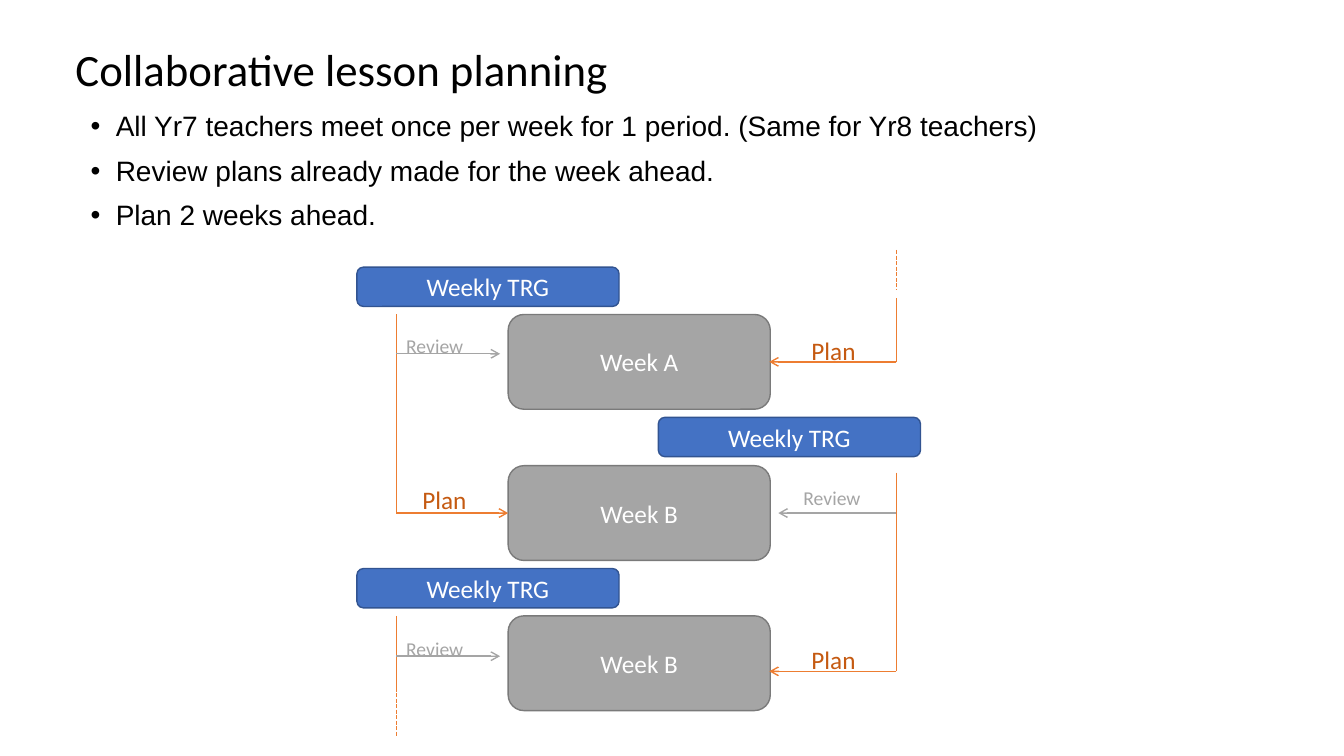
from lxml.etree import SubElement
from pptx import Presentation
from pptx.dml.color import RGBColor
from pptx.enum.dml import MSO_LINE
from pptx.enum.shapes import MSO_CONNECTOR, MSO_SHAPE
from pptx.enum.text import MSO_ANCHOR, PP_ALIGN
from pptx.oxml.ns import qn
from pptx.util import Emu, Pt

PX = 9144
BLUE, BLUE_EDGE = "4472C4", "325491"
GRAY, GRAY_EDGE = "A5A5A5", "7A7A7A"
ORANGE, RUST = "ED7D31", "C55A11"
LEFT_LINE, RIGHT_LINE = 393, 889


def color(value):
    return RGBColor.from_string(value)


def write(shape, lines, size, font_name, font_color):
    frame = shape.text_frame
    frame.text = "\n".join(lines)
    for paragraph in frame.paragraphs:
        for run in paragraph.runs:
            run.font.size = Pt(size)
            run.font.name = font_name
            run.font.color.rgb = color(font_color)
    return frame


presentation = Presentation()
presentation.slide_width = Emu(1333 * PX)
presentation.slide_height = Emu(750 * PX)
slide = presentation.slides.add_slide(presentation.slide_layouts[6])
shapes = slide.shapes

title = shapes.add_textbox(65 * PX, 35 * PX, 788 * PX, 73 * PX)
frame = write(title, ["Collaborative lesson planning"], 32, "Calibri", "000000")
frame.word_wrap = True
frame.vertical_anchor = MSO_ANCHOR.MIDDLE
frame.paragraphs[0].line_spacing = 0.9

body = shapes.add_textbox(80 * PX, 107 * PX, 1207 * PX, 506 * PX)
points = [
    "All Yr7 teachers meet once per week for 1 period. (Same for Yr8 teachers)",
    "Review plans already made for the week ahead.",
    "Plan 2 weeks ahead.",
]
frame = write(body, points, 20, "Arial", "000000")
frame.word_wrap = True
for index, paragraph in enumerate(frame.paragraphs):
    paragraph.line_spacing = 0.9
    paragraph.space_before = Pt(10 if index else 0)
    properties = paragraph._p.get_or_add_pPr()
    properties.set("marL", str(25 * PX))
    properties.set("indent", str(-25 * PX))
    SubElement(properties, qn("a:buFont")).set("typeface", "Arial")
    SubElement(properties, qn("a:buChar")).set("char", "•")

boxes = [
    ("Week A", 504, 312, 94, GRAY, GRAY_EDGE),
    ("Weekly TRG", 653, 414, 39, BLUE, BLUE_EDGE),
    ("Weekly TRG", 354, 265, 39, BLUE, BLUE_EDGE),
    ("Week B", 504, 462, 94, GRAY, GRAY_EDGE),
    ("Weekly TRG", 354, 564, 39, BLUE, BLUE_EDGE),
    ("Week B", 504, 611, 94, GRAY, GRAY_EDGE),
]
for text, left, top, height, fill, edge in boxes:
    box = shapes.add_shape(
        MSO_SHAPE.ROUNDED_RECTANGLE, left * PX, top * PX, 260 * PX, height * PX
    )
    box.shadow.inherit = False
    box.fill.solid()
    box.fill.fore_color.rgb = color(fill)
    box.line.color.rgb = color(edge)
    box.line.width = Pt(1)
    frame = write(box, [text], 18, "Calibri", "FFFFFF")
    frame.vertical_anchor = MSO_ANCHOR.MIDDLE
    frame.paragraphs[0].alignment = PP_ALIGN.CENTER

stems = [
    (LEFT_LINE, 312, 509, False),
    (RIGHT_LINE, 469, 666, False),
    (LEFT_LINE, 611, 682, False),
    (RIGHT_LINE, 296, 359, False),
    (RIGHT_LINE, 248, 288, True),
    (LEFT_LINE, 682, 730, True),
]
arrows = [
    (LEFT_LINE, 496, 351, GRAY),
    (LEFT_LINE, 504, 509, ORANGE),
    (RIGHT_LINE, 772, 509, GRAY),
    (RIGHT_LINE, 763, 666, ORANGE),
    (LEFT_LINE, 496, 651, GRAY),
    (RIGHT_LINE, 763, 359, ORANGE),
]
links = [(x, top, x, bottom, ORANGE, dashed, False) for x, top, bottom, dashed in stems]
links += [(start, y, end, y, line_color, False, True) for start, end, y, line_color in arrows]
for start_x, start_y, end_x, end_y, line_color, dashed, has_arrow in links:
    connector = shapes.add_connector(
        MSO_CONNECTOR.STRAIGHT, start_x * PX, start_y * PX, end_x * PX, end_y * PX
    )
    connector.line.color.rgb = color(line_color)
    connector.line.width = Pt(1)
    if dashed:
        connector.line.dash_style = MSO_LINE.SQUARE_DOT
    if has_arrow:
        SubElement(connector.line._get_or_add_ln(), qn("a:tailEnd")).set("type", "arrow")
    SubElement(connector._element.spPr, qn("a:effectLst"))

labels = [
    ("Plan", 18, RUST, 64, 40, [(795, 328), (409, 476), (795, 634)]),
    ("Review", 14, GRAY, 78, 34, [(393, 326), (393, 627), (787, 477)]),
]
for text, size, text_color, width, height, places in labels:
    for left, top in places:
        label = shapes.add_textbox(left * PX, top * PX, width * PX, height * PX)
        frame = write(label, [text], size, "Calibri", text_color)
        frame.word_wrap = False

presentation.save("out.pptx")
